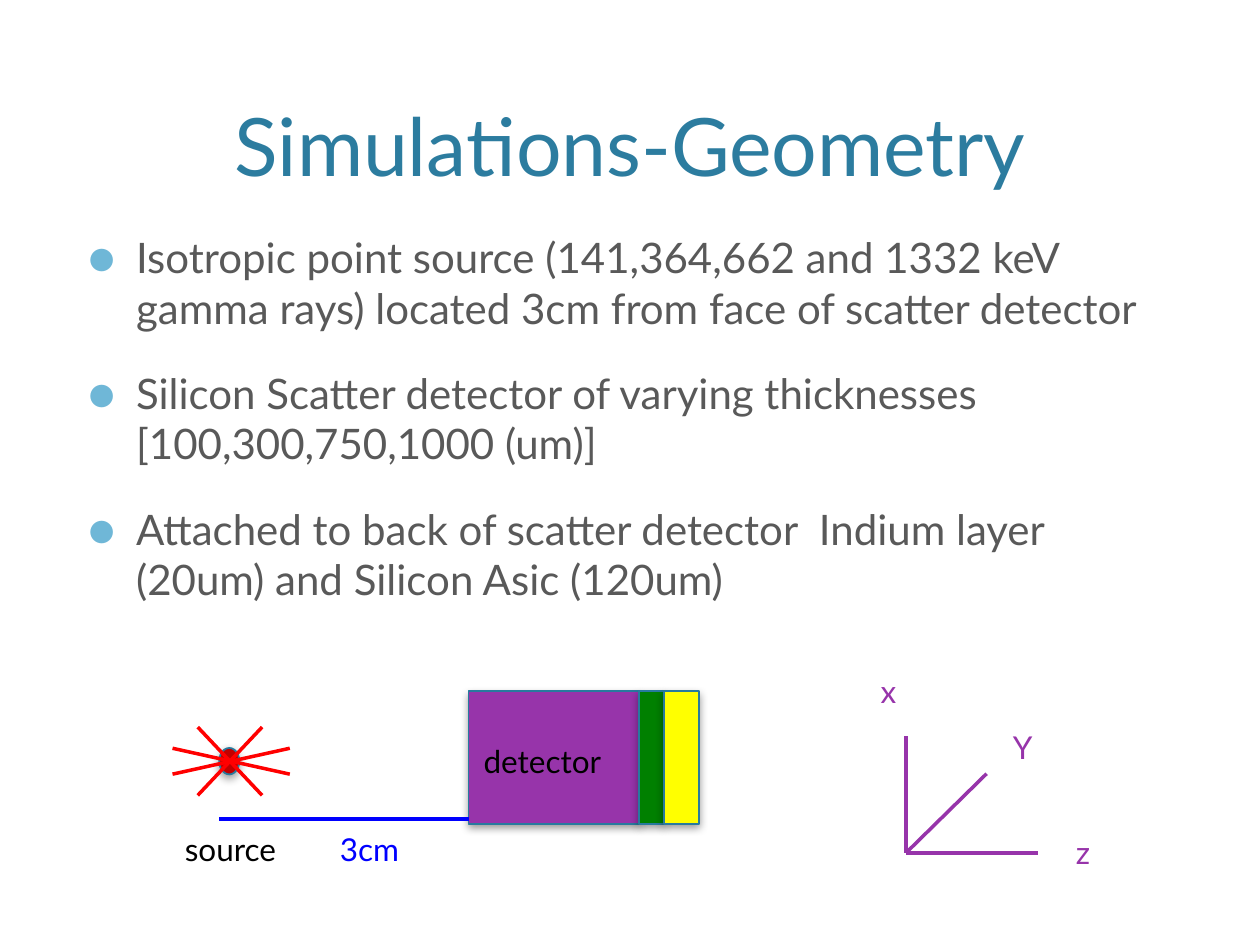
from lxml import etree
from pptx import Presentation
from pptx.dml.color import RGBColor
from pptx.enum import shapes, text
from pptx.oxml import ns
from pptx.util import Pt

FONT = "Lato"
TITLE = RGBColor(0x2C, 0x7C, 0x9F)
BODY = RGBColor(0x59, 0x59, 0x59)
BULLET = RGBColor(0x6F, 0xB7, 0xD7)
OUTLINE = RGBColor(0x28, 0x7A, 0x9E)
PURPLE = RGBColor(0x97, 0x34, 0xAA)
GREEN = RGBColor(0x00, 0x80, 0x00)
YELLOW = RGBColor(0xFF, 0xFF, 0x00)
DARK_RED = RGBColor(0xC0, 0x00, 0x00)
RED = RGBColor(0xFF, 0x00, 0x00)
BLUE = RGBColor(0x00, 0x00, 0xFF)
BLACK = RGBColor(0x00, 0x00, 0x00)

BULLETS = [
    "Isotropic point source (141,364,662 and 1332 keV gamma rays) "
    "located 3cm from face of scatter detector",
    "Silicon Scatter detector of varying thicknesses [100,300,750,1000 (um)]",
    "Attached to back of scatter detector  Indium layer (20um) "
    "and Silicon Asic (120um)",
]


def sub(parent, tag, **attrs):
    el = etree.SubElement(parent, ns.qn(tag))
    for key, value in attrs.items():
        el.set(key, str(value))
    return el


def add_run(p, words, size, color):
    r = p.add_run()
    r.text = words
    r.font.name = FONT
    r.font.size = Pt(size)
    r.font.color.rgb = color


def add_frame(s, x, y, w, h):
    tf = s.shapes.add_textbox(Pt(x), Pt(y), Pt(w), Pt(h)).text_frame
    tf.word_wrap = True
    return tf


def add_title(s, words):
    tf = add_frame(s, 43.2, 8.6, 633.6, 105.1)
    tf.vertical_anchor = text.MSO_ANCHOR.BOTTOM
    p = tf.paragraphs[0]
    p.alignment = text.PP_ALIGN.CENTER
    add_run(p, words, 46, TITLE)


def add_bullets(s, items):
    tf = add_frame(s, 43.2, 128.9, 633.6, 342)
    for i, item in enumerate(items):
        p = tf.add_paragraph() if i else tf.paragraphs[0]
        p.space_before = Pt(20)
        pPr = p._p.get_or_add_pPr()
        pPr.set("marL", str(Pt(27.5)))
        pPr.set("indent", str(-Pt(27.5)))
        sub(sub(pPr, "a:buClr"), "a:srgbClr", val=BULLET)
        sub(pPr, "a:buSzPct", val=110000)
        sub(pPr, "a:buFont", typeface=FONT)
        sub(pPr, "a:buChar", char="●")
        add_run(p, item, 24, BODY)


def add_label(s, words, x, y, w, color):
    tf = add_frame(s, x, y, w, 29)
    add_run(tf.paragraphs[0], words, 18, color)


def add_solid(s, kind, x, y, w, h, color):
    sp = s.shapes.add_shape(kind, Pt(x), Pt(y), Pt(w), Pt(h))
    sp.fill.solid()
    sp.fill.fore_color.rgb = color
    sp.line.color.rgb = OUTLINE
    sp.line.width = Pt(1)
    sp.shadow.inherit = False
    effects = sp._element.spPr.find(ns.qn("a:effectLst"))
    shadow = sub(effects, "a:outerShdw", blurRad=Pt(5), dist=Pt(2),
                 dir=90 * 60000, rotWithShape=0)
    sub(sub(shadow, "a:srgbClr", val=BLACK), "a:alpha", val=40000)


def add_line(s, x1, y1, x2, y2, color):
    cn = s.shapes.add_connector(shapes.MSO_CONNECTOR.STRAIGHT,
                                Pt(x1), Pt(y1), Pt(x2), Pt(y2))
    cn.line.color.rgb = color
    cn.line.width = Pt(2)
    sub(cn._element.spPr, "a:effectLst")


def add_detector(s):
    x = 267.8
    for w, color in ((97.2, PURPLE), (14.4, GREEN), (20.2, YELLOW)):
        add_solid(s, shapes.MSO_SHAPE.RECTANGLE, x, 395, w, 75.8, color)
        x += w
    add_label(s, "detector", 269.3, 420.5, 96.5, BLACK)


def add_source(s):
    add_solid(s, shapes.MSO_SHAPE.OVAL, 125.3, 427.4, 11.5, 15.1, DARK_RED)
    cy = 435
    for left, right, dy in ((113, 149.8, 19.5), (98.6, 165.6, 7.4)):
        for rise in (dy, -dy):
            add_line(s, left, cy - rise, right, cy + rise, RED)
    add_label(s, "source", 98.6, 470.9, 88.6, BLACK)


def add_distance(s):
    add_line(s, 125.3, 468, 267.8, 468, BLUE)
    add_label(s, "3cm", 187.2, 470.9, 60.5, BLUE)


def add_axes(s):
    x0, y0 = 517.7, 487.4
    for x, y in ((x0, 420.5), (593.3, y0), (563.8, 442.1)):
        add_line(s, x0, y0, x, y, PURPLE)
    for name, x, y in (("z", 607.7, 472.3), ("x", 496.1, 380.2),
                       ("Y", 571.7, 412.6)):
        add_label(s, name, x, y, 43.9, PURPLE)


def main():
    prs = Presentation()
    prs.slide_width, prs.slide_height = Pt(720), Pt(540)
    s = prs.slides.add_slide(prs.slide_layouts[6])
    add_title(s, "Simulations-Geometry")
    add_bullets(s, BULLETS)
    add_detector(s)
    add_source(s)
    add_distance(s)
    add_axes(s)
    prs.save("out.pptx")


if __name__ == "__main__":
    main()
